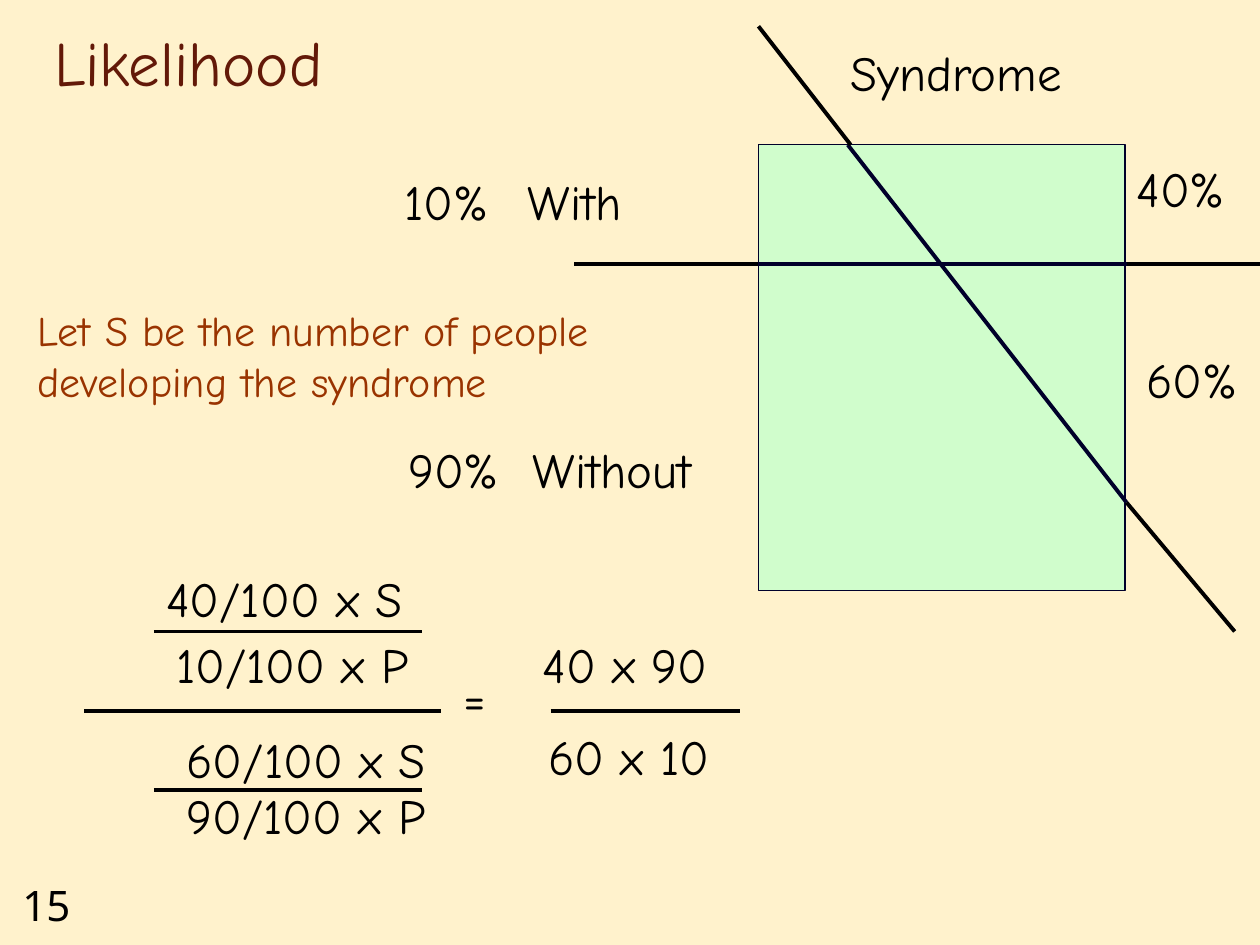
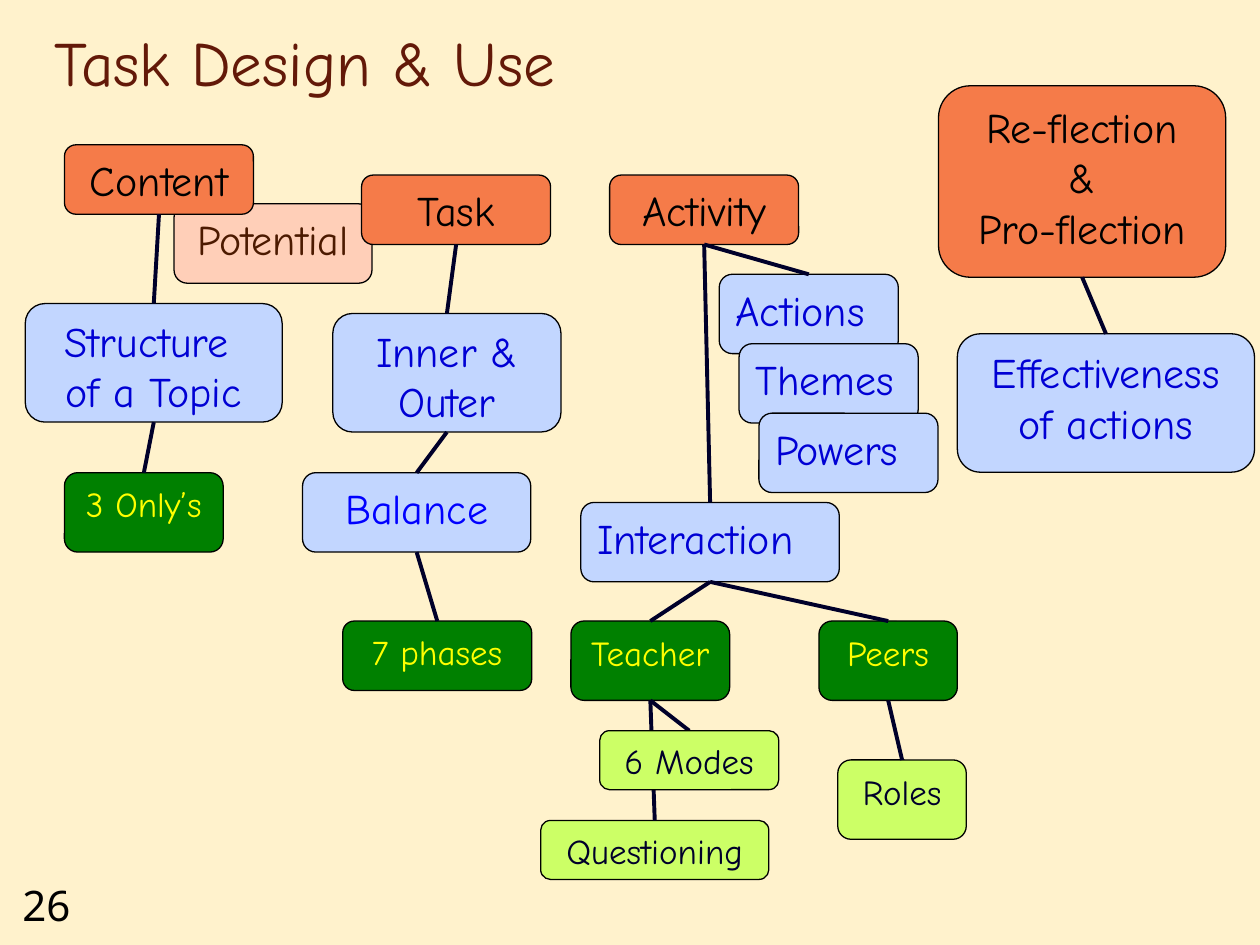
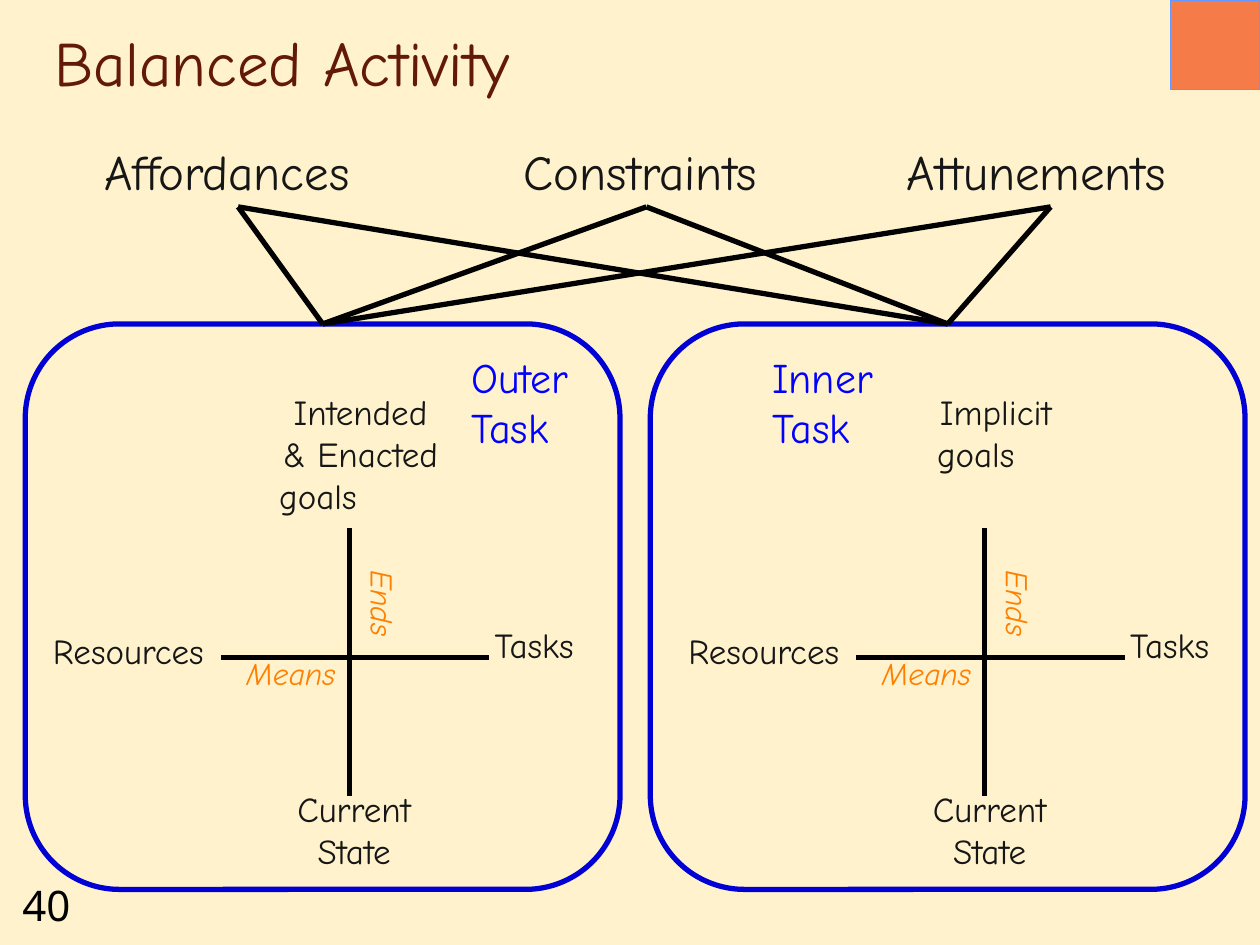
"""Build three slides on likelihood, task design and balanced activity."""
from dataclasses import dataclass
from itertools import product

from lxml.etree import SubElement
from pptx import Presentation
from pptx.dml.color import RGBColor
from pptx.enum.shapes import MSO_CONNECTOR, MSO_SHAPE
from pptx.enum.text import MSO_ANCHOR, MSO_AUTO_SIZE, PP_ALIGN
from pptx.oxml.ns import qn
from pptx.util import Cm, Pt


@dataclass(frozen=True)
class Theme:
    font: str = "Comic Neue"
    digits: str = "Noto Sans"
    paper: str = "FFF2CC"
    title: str = "631908"
    black: str = "000000"
    navy: str = "00002A"
    ink: str = "161616"
    rust: str = "993300"
    blue: str = "0000FF"
    deep: str = "0000D4"
    amber: str = "FF8000"
    yellow: str = "FFFF00"
    brown: str = "4C1A00"
    orange: str = "F57B49"
    peach: str = "FFCFB8"
    sky: str = "C2D6FF"
    green: str = "008000"
    lime: str = "CCFF66"
    mint: str = "CCFFCC"
    edge: str = "6699FF"
    head: int = 36
    large: int = 28
    body: int = 24
    small: int = 20
    tiny: int = 18
    thin: float = 0.75
    mid: float = 2.25
    bold: float = 3


T = Theme()
LEFT, MID = PP_ALIGN.LEFT, PP_ALIGN.CENTER


def put(page, box, text="", size=T.body, tint=T.black, align=LEFT, wrap=False,
        form=None, fill=None, edge=T.black, width=T.thin, font=T.font):
    sides = [Cm(side) for side in box]
    if form is None:
        shape = page.shapes.add_textbox(*sides)
        shape.text_frame.auto_size = MSO_AUTO_SIZE.SHAPE_TO_FIT_TEXT
    else:
        shape = page.shapes.add_shape(form, *sides)
        shape.shadow.inherit = False
        shape.line.color.rgb = RGBColor.from_string(edge)
        shape.line.width = Pt(width)
        if fill:
            shape.fill.solid()
            shape.fill.fore_color.rgb = RGBColor.from_string(fill)
        else:
            shape.fill.background()
    frame = shape.text_frame
    frame.word_wrap = wrap
    frame.vertical_anchor = MSO_ANCHOR.TOP
    frame.text = text
    for count, para in enumerate(frame.paragraphs):
        para.alignment = LEFT if count else align
        for run in para.runs:
            run.font.name = font
            run.font.size = Pt(size)
            run.font.color.rgb = RGBColor.from_string(tint)
    return shape


def link(page, start=(0, 0), stop=(0, 0), tint=T.black, width=T.mid):
    ends = [Cm(side) for side in (*start, *stop)]
    line = page.shapes.add_connector(MSO_CONNECTOR.STRAIGHT, *ends)
    line.line.color.rgb = RGBColor.from_string(tint)
    line.line.width = Pt(width)
    SubElement(line.element.spPr, qn("a:effectLst"))
    return line


deck = Presentation()
deck.slide_width, deck.slide_height = Cm(25.4), Cm(19.05)
pages = []
for title, number in (("Likelihood", "15"), ("Task Design & Use", "26"),
                      ("Balanced Activity", "40")):
    page = deck.slides.add_slide(deck.slide_layouts[6])
    page.background.fill.solid()
    page.background.fill.fore_color.rgb = RGBColor.from_string(T.paper)
    put(page, (0.2, 17.6, 1.9, 1.27), number, wrap=True, font=T.digits)
    head = put(page, (0.84, 0.43, 21.59, 1.7), title, T.head, T.title, wrap=True)
    head.text_frame.auto_size = MSO_AUTO_SIZE.NONE
    head.text_frame.vertical_anchor = MSO_ANCHOR.BOTTOM
    pages.append(page)
odds, tasks, poise = pages

field = put(odds, (15.29, 2.92, 7.39, 8.99), form=MSO_SHAPE.RECTANGLE,
            fill=T.mint, edge=T.navy)
shade = field.element.spPr.find(qn("a:solidFill"))[0]
SubElement(shade, qn("a:alpha"), val="91000")

for start, stop, tint in (
    ((14.81, 5.33), (22.91, 5.33), T.navy),
    ((11.58, 5.33), (15.29, 5.33), T.black),
    ((22.71, 5.33), (25.4, 5.33), T.black),
    ((17.09, 2.92), (22.71, 10.13), T.navy),
    ((24.89, 12.73), (22.71, 10.13), T.black),
    ((17.15, 2.92), (15.29, 0.53), T.black),
    ((3.1, 12.73), (8.51, 12.73), T.black),
    ((3.1, 15.93), (8.51, 15.93), T.black),
    ((1.7, 14.33), (8.89, 14.33), T.black),
    ((11.1, 14.33), (14.91, 14.33), T.black),
):
    link(odds, start, stop, tint)

for text, left, top, width in (
    ("With", 10.39, 3.33, 2.67),
    (" Without", 10.16, 8.74, 4.42),
    ("10%", 7.9, 3.33, 2.26),
    ("90%", 7.98, 8.74, 2.46),
    ("Syndrome", 16.89, 0.74, 4.93),
    ("40%", 22.66, 3.07, 2.46),
    ("60%", 22.86, 6.93, 2.46),
    ("40/100 x S", 3.1, 11.33, 6.4),
    ("10/100 x P", 3.3, 12.67, 5.59),
    ("60/100 x S", 3.51, 14.58, 6.4),
    ("90/100 x P", 3.51, 15.72, 5.59),
    ("40 x 90", 10.69, 12.67, 4.09),
    ("60 x 10", 10.8, 14.53, 3.91),
    ("=", 9.09, 13.34, 1.02),
):
    put(odds, (left, top, width, 1.45), text, T.large, wrap="/" in text)
put(odds, (0.51, 6.02, 12.6, 2.31),
    "Let S be the number of people \vdeveloping the syndrome", tint=T.rust)

styles = {
    "main": (T.orange, T.black, T.body, MID),
    "pale": (T.peach, T.brown, T.body, MID),
    "part": (T.sky, T.deep, T.body, MID),
    "pure": (T.sky, T.blue, T.body, MID),
    "list": (T.sky, T.deep, T.body, LEFT),
    "dark": (T.green, T.yellow, T.small, MID),
    "leaf": (T.lime, T.navy, T.small, MID),
}
nodes = {}
for name, style, text, box in (
    ("phases", "dark", "7 phases", (6.91, 12.52, 3.81, 1.4)),
    ("scope", "pale", "Potential", (3.51, 4.11, 3.99, 1.6)),
    ("topic", "part", "Structure \vof a Topic", (0.51, 6.12, 5.18, 2.39)),
    ("talk", "list", "Interaction", (11.71, 10.13, 5.21, 1.6)),
    ("effect", "part", "Effectiveness of actions", (19.3, 6.73, 5.99, 2.79)),
    ("inner", "part", "Inner & Outer", (6.71, 6.32, 4.6, 2.39)),
    ("teacher", "dark", "Teacher", (11.51, 12.52, 3.2, 1.6)),
    ("roles", "leaf", "Roles", (16.89, 15.32, 2.59, 1.6)),
    ("only", "dark", "3 Only’s", (1.3, 9.53, 3.2, 1.6)),
    ("balance", "pure", "Balance", (6.1, 9.53, 4.6, 1.6)),
    ("active", "main", "Activity", (12.29, 3.53, 3.81, 1.4)),
    ("mirror", "main", "Re-flection\v&\vPro-flection", (18.92, 1.73, 5.79, 3.86)),
    ("content", "main", "Content", (1.3, 2.92, 3.81, 1.4)),
    ("task", "main", "Task", (7.29, 3.53, 3.81, 1.4)),
    ("actions", "list", "Actions", (14.5, 5.53, 3.61, 1.6)),
    ("themes", "list", "Themes", (14.9, 6.93, 3.61, 1.6)),
    ("powers", "list", "Powers", (15.3, 8.33, 3.61, 1.6)),
    ("query", "leaf", "Questioning", (10.9, 16.54, 4.6, 1.19)),
    ("peers", "dark", "Peers", (16.51, 12.52, 2.79, 1.6)),
    ("modes", "leaf", "6 Modes", (12.09, 14.73, 3.61, 1.19)),
):
    fill, tint, size, align = styles[style]
    nodes[name] = put(tasks, box, text, size, tint, align, True,
                      MSO_SHAPE.ROUNDED_RECTANGLE, fill)

for upper, lower in (
    ("content", "topic"), ("topic", "only"), ("task", "inner"),
    ("inner", "balance"), ("balance", "phases"), ("active", "actions"),
    ("active", "talk"), ("talk", "teacher"), ("talk", "peers"),
    ("teacher", "modes"), ("teacher", "query"), ("peers", "roles"),
    ("mirror", "effect"),
):
    line = link(tasks, tint=T.navy)
    line.begin_connect(nodes[upper], 2)
    line.end_connect(nodes[lower], 0)
front = nodes["modes"].element
front.getparent().append(front)

panels = []
for side in range(2):
    step = 12.81 * side
    link(poise, (7.04 + step, 10.64), (7.04 + step, 16.05), width=T.bold)
    link(poise, (9.86 + step, 13.26), (4.45 + step, 13.26), width=T.bold)
    ends = put(poise, (6.96 + step, 11.25, 1.27, 1.78), "Ends", T.tiny, T.amber)
    ends.element.txBody.bodyPr.set("vert", "vert")
    means = put(poise, (4.72 + step, 13.06, 2.54, 1.02), "Means", T.tiny, T.amber)
    for label in (ends, means):
        label.text_frame.paragraphs[0].runs[0].font.italic = True
    for text, left, top, width, height in (
        ("Current\vState", 5.64, 15.75, 3, 1.96),
        ("Resources", 0.71, 12.57, 3.76, 1.12),
        ("Tasks", 9.65, 12.45, 2.24, 1.12),
    ):
        put(poise, (left + step, top, width, height), text, T.small, T.ink, MID)
    panels.append(put(poise, (0.51 + 12.6 * side, 6.53, 11.99, 11.4),
                      form=MSO_SHAPE.ROUNDED_RECTANGLE, edge=T.deep, width=T.bold))

for text, box in (("Outer\vTask", (9.25, 6.96, 2.77, 2.31)),
                  ("Inner\vTask", (15.32, 6.96, 2.64, 2.31))):
    put(poise, box, text, tint=T.blue)
for text, box in (("Intended\v& Enacted\ngoals", (5.38, 7.75, 3.78, 2.82)),
                  ("Implicit\ngoals", (18.64, 7.75, 2.87, 1.96))):
    put(poise, box, text, T.small, T.ink, MID)
for text, left, width in (("Affordances", 1.85, 5.89), ("Constraints", 10.31, 5.46),
                          ("Attunements", 18.03, 6.25)):
    put(poise, (left, 2.72, width, 1.45), text, T.large, T.ink)
for peak, panel in product((4.8, 13.03, 21.18), panels):
    link(poise, stop=(peak, 4.17), width=T.bold).begin_connect(panel, 0)
put(poise, (23.6, 0, 1.8, 1.8), form=MSO_SHAPE.ACTION_BUTTON_CUSTOM,
    fill=T.orange, edge=T.edge)

deck.save("out.pptx")
